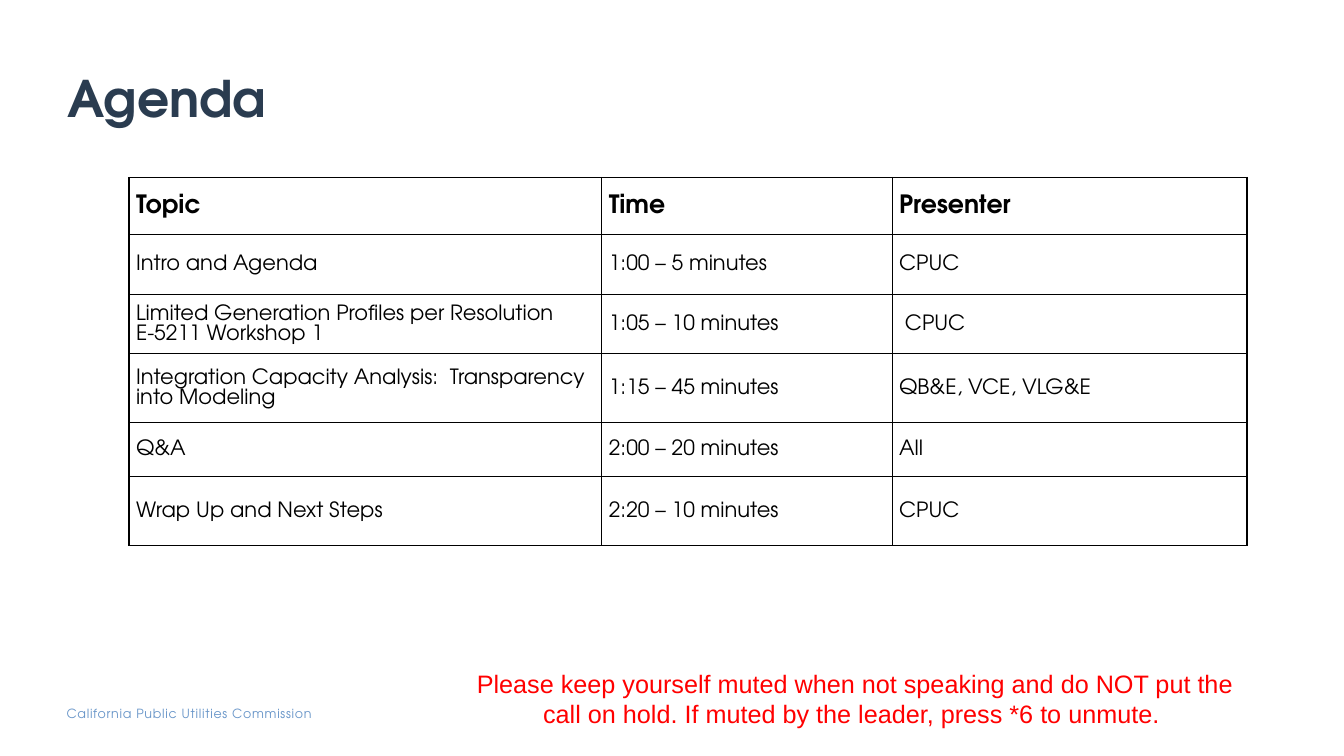
from dataclasses import dataclass

from lxml import etree
from pptx import Presentation
from pptx import util as u
from pptx.dml.color import RGBColor
from pptx.enum import text as t
from pptx.oxml.ns import qn

WIDE, HIGH = u.Inches(13.33), u.Inches(7.5)
NAVY = RGBColor(0x2A, 0x3C, 0x50)
BLUE = RGBColor(0x69, 0x96, 0xC9)
RED = RGBColor(0xFF, 0x00, 0x00)
BLACK = RGBColor(0x00, 0x00, 0x00)
SANS, ROUND = "Arial", "TeX Gyre Adventor"

# Column widths and row heights, in percent of the slide
COLS = (35.18, 21.6, 26.41)
ROWS = (7.6, 7.87, 7.87, 9.07, 7.2, 9.07)
AGENDA = (
    ("Topic", "Time", "Presenter"),
    ("Intro and Agenda", "1:00 – 5 minutes", "CPUC"),
    ("Limited Generation Profiles per Resolution E-5211 Workshop 1",
     "1:05 – 10 minutes", " CPUC"),
    ("Integration Capacity Analysis:  Transparency into Modeling",
     "1:15 – 45 minutes", "QB&E, VCE, VLG&E"),
    ("Q&A", "2:00 – 20 minutes", "All"),
    ("Wrap Up and Next Steps", "2:20 – 10 minutes", "CPUC"),
)


@dataclass(frozen=True)
class Style:
    size: float
    color: RGBColor
    face: str = ROUND
    bold: bool = False
    track: int = 0
    lead: float = 1.0
    align: t.PP_ALIGN = t.PP_ALIGN.LEFT


@dataclass(frozen=True)
class Label:
    """A text box; its place and insets are left, top, width, height / right, bottom."""
    words: str
    place: tuple[float, float, float, float]
    style: Style
    inset: tuple[float, float, float, float] = (0.1, 0.05, 0.1, 0.05)
    anchor: t.MSO_ANCHOR = t.MSO_ANCHOR.TOP


HEAD = Style(18, BLACK, bold=True)
BODY = Style(15, BLACK, lead=1.07)
LABELS = (
    Label("California Public Utilities Commission", (4.95, 93.33, 24.08, 2),
          Style(9, BLUE, track=50), (0, 0, 0, 0)),
    Label("Agenda", (5.03, 8.8, 90, 8.8), Style(36, NAVY, bold=True, lead=0.9),
          (0, 0.05, 0.1, 0.05), t.MSO_ANCHOR.BOTTOM),
    Label("Please keep yourself muted when not speaking and do NOT put the "
          "call on hold. If muted by the leader, press *6 to unmute. ",
          (33.31, 87.73, 60.6, 6.93),
          Style(18, RED, SANS, align=t.PP_ALIGN.CENTER)),
)


def across(part: float) -> int:
    """Percent of the slide's width."""
    return round(WIDE * part / 100)


def down(part: float) -> int:
    """Percent of the slide's height."""
    return round(HIGH * part / 100)


def write(frame, words: str, style: Style) -> None:
    line = frame.paragraphs[0]
    line.alignment = style.align
    line.line_spacing = style.lead
    run = line.add_run()
    run.text = words
    font = run.font
    font.name, font.size, font.bold = style.face, u.Pt(style.size), style.bold
    font.color.rgb = style.color
    if style.track:
        font._element.set("spc", str(style.track))


def add_label(slide, label: Label) -> None:
    left, top, width, height = label.place
    box = slide.shapes.add_textbox(across(left), down(top), across(width), down(height))
    frame = box.text_frame
    frame.word_wrap = True
    frame.vertical_anchor = label.anchor
    (frame.margin_left, frame.margin_top,
     frame.margin_right, frame.margin_bottom) = map(u.Inches, label.inset)
    write(frame, label.words, label.style)


def rule(cell) -> None:
    """Draw a thin black border on all four sides."""
    props = cell._tc.get_or_add_tcPr()
    for spot, side in enumerate("LRTB"):
        edge = etree.Element(qn(f"a:ln{side}"), w=str(u.Pt(1)))
        fill = etree.SubElement(edge, qn("a:solidFill"))
        etree.SubElement(fill, qn("a:srgbClr"), val=str(BLACK))
        props.insert(spot, edge)


def add_agenda(slide) -> None:
    frame = slide.shapes.add_table(len(ROWS), len(COLS), across(9.6), down(23.47),
                                   across(sum(COLS)), down(sum(ROWS)))
    table = frame.table
    table.first_row = table.horz_banding = False
    for col, width in zip(table.columns, COLS):
        col.width = across(width)
    for row, height, texts in zip(table.rows, ROWS, AGENDA):
        row.height = down(height)
        style = HEAD if texts is AGENDA[0] else BODY
        for cell, words in zip(row.cells, texts):
            cell.fill.background()
            cell.vertical_anchor = t.MSO_ANCHOR.MIDDLE
            cell.margin_left = cell.margin_right = u.Inches(0.07)
            cell.margin_top = cell.margin_bottom = 0
            write(cell.text_frame, words, style)
            rule(cell)


def main() -> None:
    deck = Presentation()
    deck.slide_width, deck.slide_height = WIDE, HIGH
    slide = deck.slides.add_slide(deck.slide_layouts[6])
    add_agenda(slide)
    for label in LABELS:
        add_label(slide, label)
    deck.save("out.pptx")


if __name__ == "__main__":
    main()
